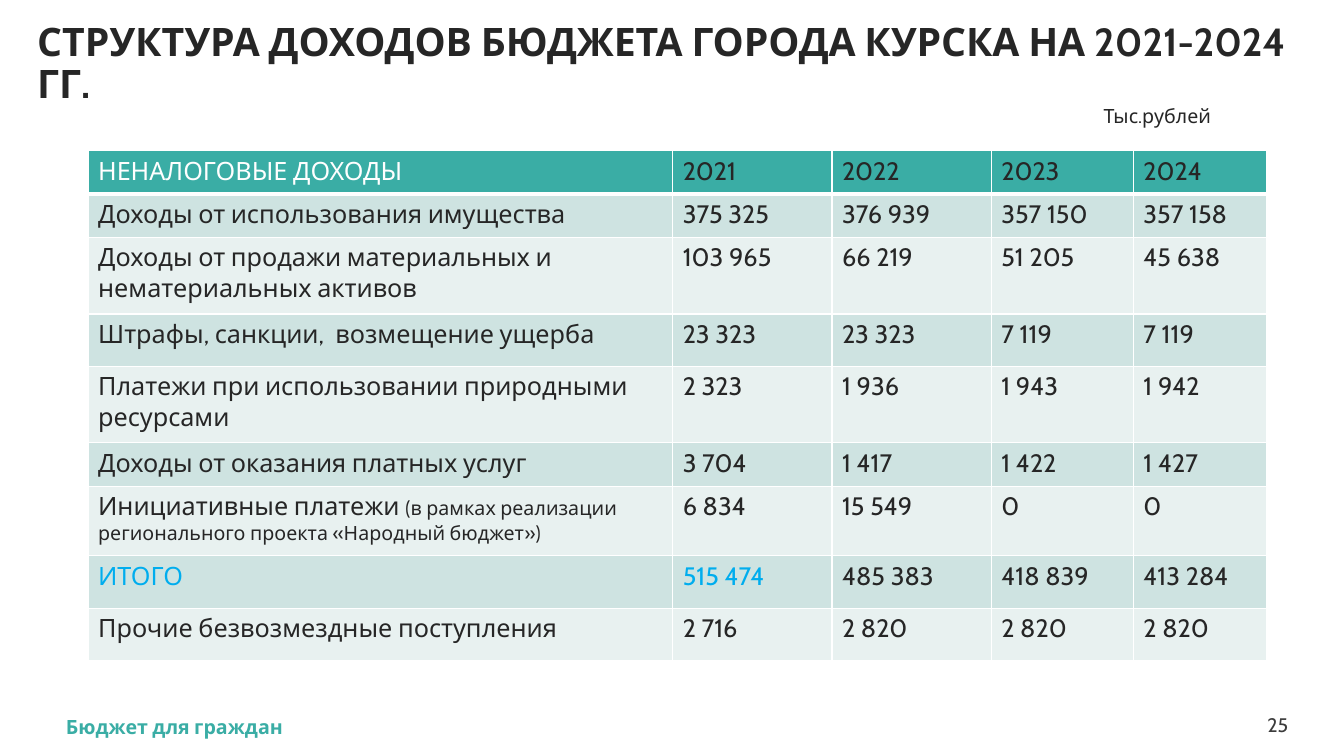
from lxml.etree import SubElement
from pptx import Presentation
from pptx.dml.color import RGBColor
from pptx.enum.text import MSO_ANCHOR as ANCHOR, PP_ALIGN as ALIGN
from pptx.oxml.ns import qn
from pptx.util import Pt

FONT = "Cabin"
INK, TEAL, WHITE, BLUE = "262626", "3AADA5", "FFFFFF", "00ADEE"
BANDS = ["CEE3E1", "E8F1F0"]
COL_WIDTHS = [417.6, 113.8, 113.8, 101.5, 95]
ROW_HEIGHTS = [31, 31, 54.7, 37.4, 54.7, 31, 49.7, 37.4, 37.4]
TOTAL_ROW = 7
PROJECT_NOTE = "(в рамках реализации регионального проекта «Народный бюджет»)"
ROWS = [
    ["НЕНАЛОГОВЫЕ ДОХОДЫ", "2021", "2022", "2023", "2024"],
    ["Доходы от использования имущества", "375 325", "376 939", "357 150", "357 158"],
    ["Доходы от продажи материальных и нематериальных активов",
     "103 965", "66 219", "51 205", "45 638"],
    ["Штрафы, санкции,  возмещение ущерба", "23 323", "23 323", "7 119", "7 119"],
    ["Платежи при использовании природными ресурсами",
     "2 323", "1 936", "1 943", "1 942"],
    ["Доходы от оказания платных услуг", "3 704", "1 417", "1 422", "1 427"],
    ["Инициативные платежи ", "6 834", "15 549", "0", "0"],
    ["ИТОГО", "515 474", "485 383", "418 839", "413 284"],
    ["Прочие безвозмездные поступления", "2 716", "2 820", "2 820", "2 820"],
]


def rgb(color):
    return RGBColor.from_string(color)


def style(p, size, color, bold=False):
    p.font.name = FONT
    p.font.size = Pt(size)
    p.font.bold = bold
    p.font.color.rgb = rgb(color)


def place(sp, left, top, width, height):
    sp.left, sp.top, sp.width, sp.height = Pt(left), Pt(top), Pt(width), Pt(height)


def add_title(s, text):
    sp = s.shapes.title
    place(sp, 19.4, 33.8, 923, 54.7)
    tf = sp.text_frame
    tf.word_wrap = True
    tf.vertical_anchor = ANCHOR.BOTTOM
    tf.margin_bottom = Pt(12)
    tf.text = text
    p = tf.paragraphs[0]
    p.alignment = ALIGN.LEFT
    p.line_spacing = 0.9
    style(p, 28, INK, True)


def add_label(s, text, box, color, bold=False, align=ALIGN.LEFT, inset=0):
    tf = s.shapes.add_textbox(*map(Pt, box)).text_frame
    tf.word_wrap = True
    tf.vertical_anchor = ANCHOR.MIDDLE
    tf.margin_left = tf.margin_right = Pt(inset)
    tf.margin_top = tf.margin_bottom = Pt(inset / 2)
    tf.text = text
    p = tf.paragraphs[0]
    p.alignment = align
    style(p, 14, color, bold)


def add_borders(cell, bottom):
    tc_pr = cell._tc.get_or_add_tcPr()
    for i, (side, width) in enumerate([("L", 1), ("R", 1), ("T", 1), ("B", bottom)]):
        ln = SubElement(tc_pr, qn(f"a:ln{side}"), w=str(Pt(width)))
        fill = SubElement(ln, qn("a:solidFill"))
        SubElement(fill, qn("a:srgbClr"), val=WHITE)
        tc_pr.insert(i, ln)


def text_color(row, col):
    if row == 0 and col == 0:
        return WHITE
    return BLUE if row == TOTAL_ROW and col < 2 else INK


def add_income_table(s):
    table = s.shapes.add_table(
        len(ROWS), len(COL_WIDTHS), Pt(62.9), Pt(107.6),
        Pt(sum(COL_WIDTHS)), Pt(sum(ROW_HEIGHTS))).table
    for col, width in zip(table.columns, COL_WIDTHS):
        col.width = Pt(width)
    for r, values in enumerate(ROWS):
        table.rows[r].height = Pt(ROW_HEIGHTS[r])
        for c, value in enumerate(values):
            cell = table.cell(r, c)
            cell.text = value
            style(cell.text_frame.paragraphs[0], 18, text_color(r, c))
            cell.fill.solid()
            cell.fill.fore_color.rgb = rgb(BANDS[(r - 1) % 2] if r else TEAL)
            add_borders(cell, 1 if r else 3)
    note = table.cell(6, 0).text_frame.paragraphs[0].add_run()
    note.text = PROJECT_NOTE
    style(note, 14, INK)


def main():
    prs = Presentation()
    prs.slide_width, prs.slide_height = Pt(960), Pt(540)
    s = prs.slides.add_slide(prs.slide_layouts[5])
    add_title(s, "СТРУКТУРА ДОХОДОВ БЮДЖЕТА ГОРОДА КУРСКА НА 2021-2024 ГГ.")
    add_label(s, "Тыс.рублей", (781.2, 70.6, 123.8, 24.5), INK, inset=7.2)
    add_income_table(s)
    add_label(s, "Бюджет для граждан", (47, 510.5, 855, 17.3), TEAL, bold=True)
    add_label(s, "25", (902.2, 509, 18, 17.3), "3C3C3C", align=ALIGN.RIGHT)
    prs.save("out.pptx")


if __name__ == "__main__":
    main()
